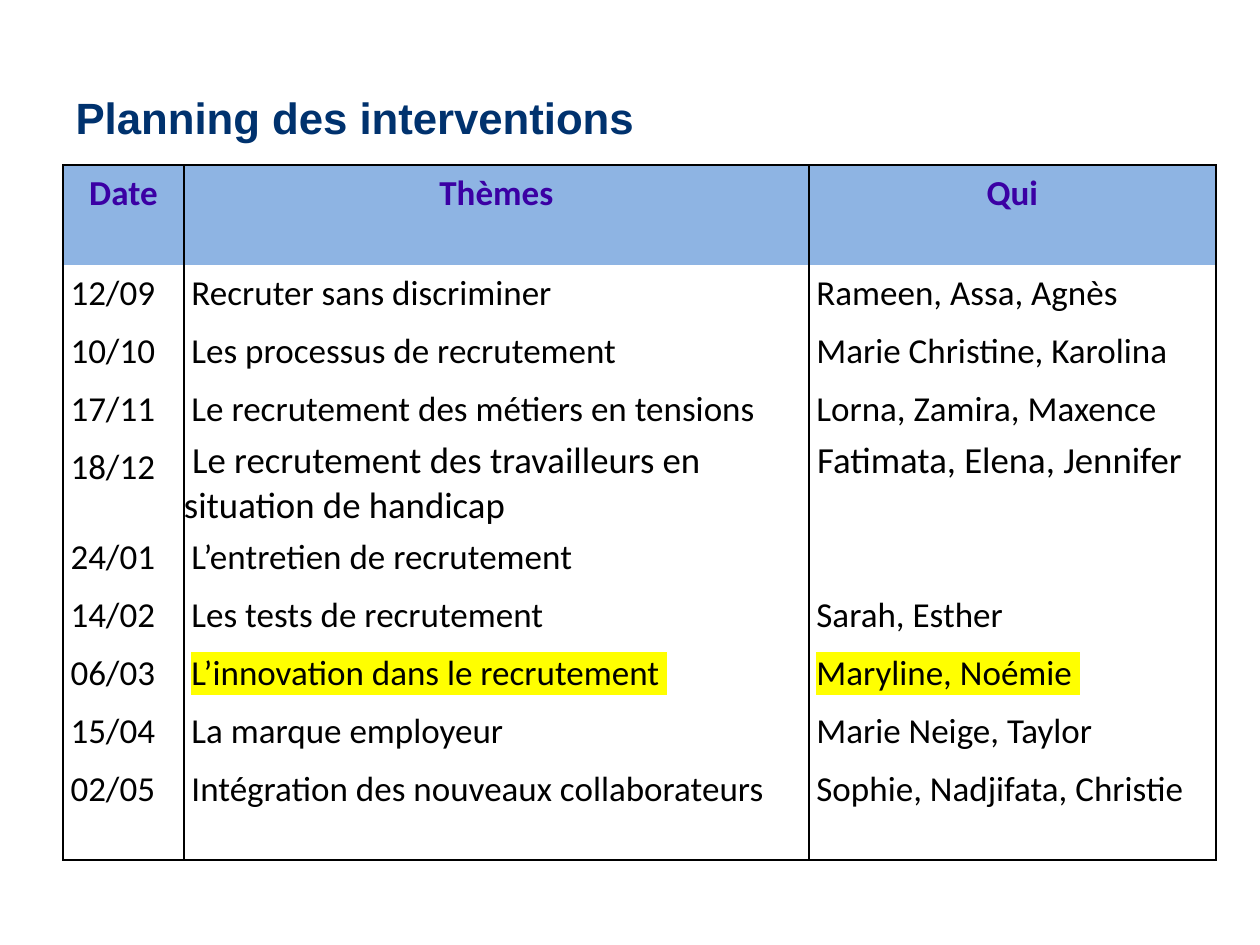
from dataclasses import dataclass

from lxml.etree import SubElement
from pptx import Presentation
from pptx.dml.color import RGBColor
from pptx.enum.text import MSO_ANCHOR, PP_ALIGN
from pptx.oxml.ns import qn
from pptx.util import Inches, Pt


@dataclass(frozen=True)
class Theme:
    title_font: str = "Arial"
    table_font: str = "Calibri"
    title_size: int = 25
    table_size: int = 20
    large_size: int = 21
    title_color: str = "00326E"
    header_color: str = "3B00A4"
    text_color: str = "000000"
    header_fill: str = "8EB4E3"
    border_color: str = "000000"
    highlight_color: str = "FFFF00"


@dataclass(frozen=True)
class Session:
    date: str
    topic: str
    speakers: str
    height: float = 0.45
    highlighted: bool = False
    tight: bool = False  # larger text without cell margins


THEME = Theme()
HEADINGS = ("Date", "Thèmes", "Qui")
COLUMN_WIDTHS = (0.96, 4.96, 3.23)
HEADER_HEIGHT = 0.79
CELL_MARGIN = 0.06
SESSIONS = (
    Session("12/09", "Recruter sans discriminer", "Rameen, Assa, Agnès"),
    Session("10/10", "Les processus de recrutement", "Marie Christine, Karolina"),
    Session("17/11", "Le recrutement des métiers en tensions", "Lorna, Zamira, Maxence"),
    Session("18/12", " Le recrutement des travailleurs en situation de handicap",
            " Fatimata, Elena, Jennifer", tight=True),
    Session("24/01", "L’entretien de recrutement", ""),
    Session("14/02", "Les tests de recrutement", "Sarah, Esther"),
    Session("06/03", "L’innovation dans le recrutement ", "Maryline, Noémie ",
            highlighted=True),
    Session("15/04", "La marque employeur", "Marie Neige, Taylor"),
    Session("02/05", "Intégration des nouveaux collaborateurs",
            "Sophie, Nadjifata, Christie", height=0.79),
)


def format_font(font, name: str, size: int, color: str, bold: bool) -> None:
    font.name = name
    font.size = Pt(size)
    font.bold = bold
    font.color.rgb = RGBColor.from_string(color)


def set_borders(cell, top: bool, bottom: bool) -> None:
    """Draw both sides, and the top or bottom edge where asked."""
    properties = cell._tc.get_or_add_tcPr()
    edges = {"a:lnL": True, "a:lnR": True, "a:lnT": top, "a:lnB": bottom}
    for tag, visible in edges.items():
        line = SubElement(properties, qn(tag), w=str(Pt(1)))
        if visible:
            fill = SubElement(line, qn("a:solidFill"))
            SubElement(fill, qn("a:srgbClr"), val=THEME.border_color)
        else:
            SubElement(line, qn("a:noFill"))


def highlight(run) -> None:
    properties = run.font._element
    mark = SubElement(properties, qn("a:highlight"))
    SubElement(mark, qn("a:srgbClr"), val=THEME.highlight_color)
    properties.find(qn("a:latin")).addprevious(mark)


def write_cell(cell, text: str, header: bool = False, last: bool = False,
               tight: bool = False, highlighted: bool = False) -> None:
    set_borders(cell, top=header, bottom=last)
    if header:
        cell.fill.solid()
        cell.fill.fore_color.rgb = RGBColor.from_string(THEME.header_fill)
    else:
        cell.fill.background()
    margin = Inches(0 if tight else CELL_MARGIN)
    cell.margin_left = cell.margin_right = margin
    cell.margin_top = cell.margin_bottom = margin
    if not text:
        return
    paragraph = cell.text_frame.paragraphs[0]
    paragraph.text = text
    paragraph.alignment = PP_ALIGN.CENTER if header else PP_ALIGN.LEFT
    run = paragraph.runs[0]
    format_font(run.font, THEME.table_font,
                THEME.large_size if tight else THEME.table_size,
                THEME.header_color if header else THEME.text_color, header)
    if highlighted:
        highlight(run)


def add_title(slide, text: str) -> None:
    title = slide.shapes.title
    title.left, title.top = Inches(0.5), Inches(0.3)
    title.width, title.height = Inches(9), Inches(1.25)
    title.text_frame.text = text
    title.text_frame.vertical_anchor = MSO_ANCHOR.MIDDLE
    paragraph = title.text_frame.paragraphs[0]
    paragraph.alignment = PP_ALIGN.LEFT
    format_font(paragraph.runs[0].font, THEME.title_font, THEME.title_size,
                THEME.title_color, True)


def add_schedule(slide) -> None:
    heights = [HEADER_HEIGHT] + [session.height for session in SESSIONS]
    table = slide.shapes.add_table(
        len(heights), len(HEADINGS), Inches(0.5), Inches(1.31),
        Inches(sum(COLUMN_WIDTHS)), Inches(sum(heights))).table
    table.first_row = table.horz_banding = False
    for column, width in zip(table.columns, COLUMN_WIDTHS):
        column.width = Inches(width)
    for row, height in zip(table.rows, heights):
        row.height = Inches(height)
    for index, heading in enumerate(HEADINGS):
        write_cell(table.cell(0, index), heading, header=True)
    for row_index, session in enumerate(SESSIONS, start=1):
        last = row_index == len(SESSIONS)
        write_cell(table.cell(row_index, 0), session.date, last=last)
        for index, text in enumerate((session.topic, session.speakers), start=1):
            write_cell(table.cell(row_index, index), text, last=last,
                       tight=session.tight, highlighted=session.highlighted)


def main() -> None:
    presentation = Presentation()
    presentation.slide_width = Inches(10)
    presentation.slide_height = Inches(7.5)
    slide = presentation.slides.add_slide(presentation.slide_layouts[5])
    add_title(slide, "Planning des interventions")
    add_schedule(slide)
    presentation.save("out.pptx")


if __name__ == "__main__":
    main()
